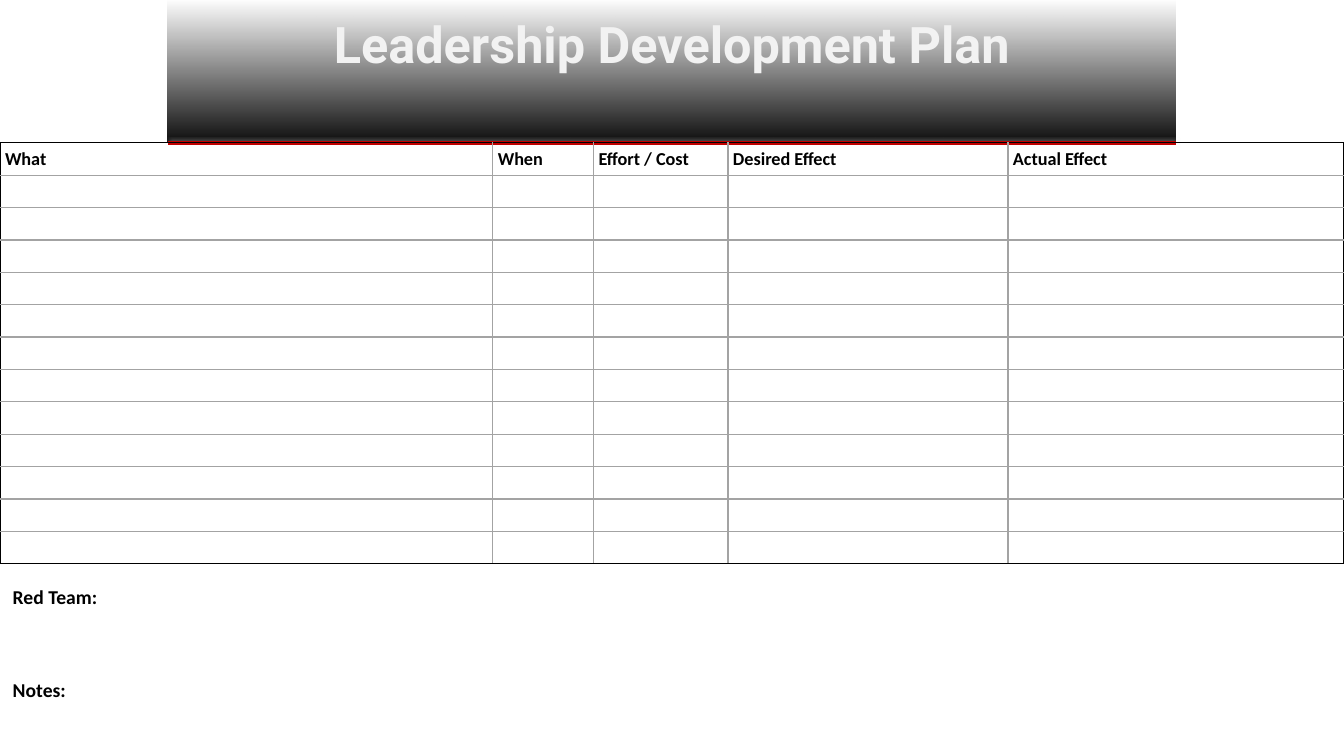
from lxml import etree
from pptx import Presentation
from pptx.dml.color import RGBColor
from pptx.enum.shapes import MSO_CONNECTOR, MSO_SHAPE
from pptx.enum.text import MSO_ANCHOR, PP_ALIGN
from pptx.oxml.ns import qn
from pptx.util import Pt

RECTANGLE = MSO_SHAPE.RECTANGLE
STRAIGHT = MSO_CONNECTOR.STRAIGHT
TOP = MSO_ANCHOR.TOP
LEFT, CENTER = PP_ALIGN.LEFT, PP_ALIGN.CENTER

TITLE = "Leadership Development Plan"
COLUMNS = [
    ("What", 352),
    ("When", 72),
    ("Effort / Cost", 96),
    ("Desired Effect", 200),
    ("Actual Effect", 240),
]
FOOTER = ["Red Team:", "Notes:"]
PLAN_ROWS = 12
COLORS = {
    "banner": "0D0D0D",
    "rule": "C00000",
    "glow": "FFFFFF",
    "title": "F2F2F2",
    "text": "000000",
    "frame": "000000",
    "grid": "A3A3A3",
}
SLIDE_WIDTH, SLIDE_HEIGHT = 960, 540
BANNER_LEFT, BANNER_WIDTH, BANNER_HEIGHT = 120, 720, 101
TABLE_TOP, ROW_HEIGHT = 102, 23.14
CELL_MARGIN = 3.6


def rgb(name):
    return RGBColor.from_string(COLORS[name])


def write_text(frame, lines, size, color="text", font="Calibri", align=LEFT, gap=0):
    frame.word_wrap = True
    for index, line in enumerate(lines):
        paragraph = frame.add_paragraph() if index else frame.paragraphs[0]
        paragraph.alignment = align
        if index:
            paragraph.space_before = Pt(gap)
        if not line:
            paragraph._p.get_or_add_endParaRPr().set("sz", str(size * 100))
            continue
        run = paragraph.add_run()
        run.text = line
        run.font.size = Pt(size)
        run.font.name = font
        run.font.bold = True
        run.font.color.rgb = rgb(color)


def add_text(slide, box, lines, **text_format):
    shape = slide.shapes.add_textbox(*map(Pt, box))
    shape.text_frame.vertical_anchor = TOP
    write_text(shape.text_frame, lines, **text_format)


def add_color(parent, color, alpha):
    element = etree.SubElement(parent, qn("a:srgbClr"), val=COLORS[color])
    if alpha is not None:
        etree.SubElement(element, qn("a:alpha"), val=str(alpha * 1000))


def add_banner(slide):
    banner = slide.shapes.add_shape(
        RECTANGLE, Pt(BANNER_LEFT), Pt(0), Pt(BANNER_WIDTH), Pt(BANNER_HEIGHT))
    banner.shadow.inherit = False
    banner.line.fill.background()
    banner.fill.gradient()
    banner.fill.gradient_angle = 270
    for stop, position in zip(banner.fill.gradient_stops, (0, 1)):
        stop.position = position
        stop.color.rgb = rgb("banner")
    clear_color = next(banner._element.spPr.iter(qn("a:srgbClr")))
    etree.SubElement(clear_color, qn("a:alpha"), val="0")


def add_rule(slide):
    rule = slide.shapes.add_connector(
        STRAIGHT, Pt(BANNER_LEFT), Pt(TABLE_TOP),
        Pt(BANNER_LEFT + BANNER_WIDTH), Pt(TABLE_TOP))
    rule.line.color.rgb = rgb("rule")
    rule.line.width = Pt(3)
    effects = etree.SubElement(rule._element.spPr, qn("a:effectLst"))
    glow = etree.SubElement(effects, qn("a:outerShdw"), blurRad=str(Pt(2)), dist="0", dir="0")
    add_color(glow, "glow", 40)


def set_borders(cell, outer_sides):
    properties = cell._tc.get_or_add_tcPr()
    for index, side in enumerate("LRTB"):
        line = etree.Element(qn(f"a:ln{side}"), w=str(Pt(1)))
        fill = etree.SubElement(line, qn("a:solidFill"))
        add_color(fill, "frame" if outer_sides[side] else "grid", None)
        properties.insert(index, line)


def add_plan_table(slide):
    row_count, column_count = PLAN_ROWS + 1, len(COLUMNS)
    table = slide.shapes.add_table(
        row_count, column_count, Pt(0), Pt(TABLE_TOP),
        Pt(SLIDE_WIDTH), Pt(ROW_HEIGHT * row_count)).table
    table.first_row = False
    table.horz_banding = False
    for row in table.rows:
        row.height = Pt(ROW_HEIGHT)
    for column_index, (heading, width) in enumerate(COLUMNS):
        table.columns[column_index].width = Pt(width)
        for row_index in range(row_count):
            cell = table.cell(row_index, column_index)
            cell.fill.background()
            cell.margin_left = cell.margin_right = Pt(CELL_MARGIN)
            cell.margin_top = cell.margin_bottom = Pt(CELL_MARGIN)
            write_text(cell.text_frame, ["" if row_index else heading], size=13)
            set_borders(cell, {
                "L": column_index == 0,
                "R": column_index == column_count - 1,
                "T": row_index == 0,
                "B": row_index == row_count - 1,
            })


def main():
    presentation = Presentation()
    presentation.slide_width = Pt(SLIDE_WIDTH)
    presentation.slide_height = Pt(SLIDE_HEIGHT)
    slide = presentation.slides.add_slide(presentation.slide_layouts[6])
    add_banner(slide)
    add_rule(slide)
    add_text(slide, (168, 6, 624, 94), [TITLE],
             size=36, color="title", font="Roboto", align=CENTER)
    add_plan_table(slide)
    add_text(slide, (2, 414, 958, 92), FOOTER, size=14, gap=50)
    presentation.save("out.pptx")


if __name__ == "__main__":
    main()
